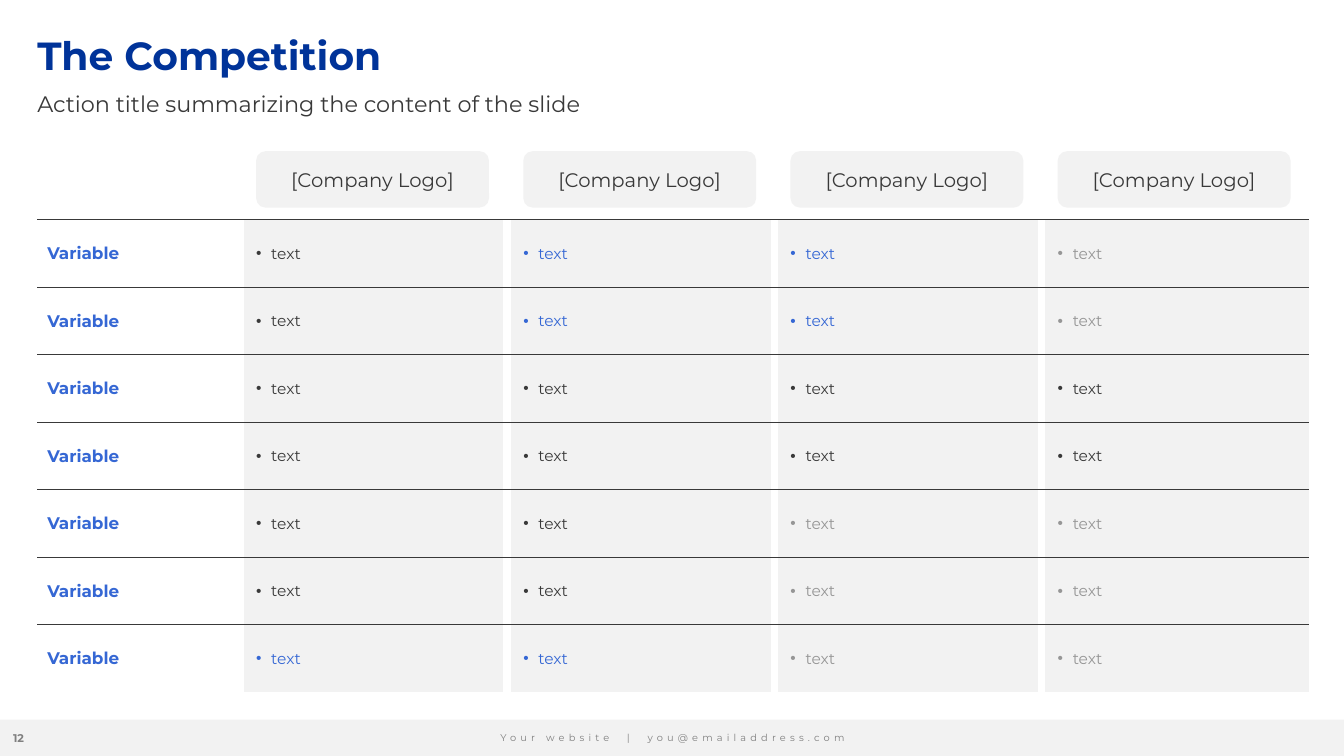
from lxml import etree
from pptx import Presentation
from pptx.dml.color import RGBColor
from pptx.enum.shapes import MSO_SHAPE
from pptx.enum.text import MSO_ANCHOR, PP_ALIGN
from pptx.oxml.ns import qn
from pptx.util import Inches, Pt

RECTANGLE, ROUNDED = MSO_SHAPE.RECTANGLE, MSO_SHAPE.ROUNDED_RECTANGLE
TOP, MIDDLE, BOTTOM = MSO_ANCHOR.TOP, MSO_ANCHOR.MIDDLE, MSO_ANCHOR.BOTTOM
LEFT, CENTER = PP_ALIGN.LEFT, PP_ALIGN.CENTER

COLORS = {
    "navy": "003399", "blue": "3567D4", "dark": "393939", "pale": "969696",
    "footer": "808080", "panel": "F2F2F2", "white": "FFFFFF",
}
RATINGS = [
    ["dark", "blue", "blue", "pale"],
    ["dark", "blue", "blue", "pale"],
    ["dark", "dark", "dark", "dark"],
    ["dark", "dark", "dark", "dark"],
    ["dark", "dark", "pale", "pale"],
    ["dark", "dark", "pale", "pale"],
    ["blue", "blue", "pale", "pale"],
]
MARGIN = 0.37
CONTENT_WIDTH = 12.6
LABEL_WIDTH, COMPANY_WIDTH = 2.01, 2.65
HEADER_HEIGHT, ROW_HEIGHT = 0.79, 0.67


class SlideBuilder:
    font = "Montserrat"

    def __init__(self, page):
        self.page = page

    def color(self, name):
        return RGBColor.from_string(COLORS[name])

    def add_span(self, para, text, size, color, bold=False, spacing=None):
        span = para.add_run()
        span.text = text
        formats = {"name": self.font, "size": Pt(size), "bold": bold}
        for key, value in formats.items():
            setattr(span.font, key, value)
        span.font.color.rgb = self.color(color)
        if spacing:
            span._r.get_or_add_rPr().set("spc", str(spacing * 100))

    def text(self, area, text, size, color, anchor=MIDDLE, align=LEFT,
             wrap=True, line_spacing=None, **style):
        box = self.page.shapes.add_textbox(*map(Inches, area))
        frame = box.text_frame
        formats = {
            "word_wrap": wrap, "vertical_anchor": anchor, "margin_left": 0,
            "margin_top": 0, "margin_right": 0, "margin_bottom": 0,
        }
        for key, value in formats.items():
            setattr(frame, key, value)
        para = frame.paragraphs[0]
        para.alignment = align
        para.line_spacing = line_spacing
        self.add_span(para, text, size, color, **style)

    def panel(self, area, kind, text=None):
        shape = self.page.shapes.add_shape(kind, *map(Inches, area))
        shape.shadow.inherit = False
        shape.fill.solid()
        shape.fill.fore_color.rgb = self.color("panel")
        shape.line.fill.background()
        if text:
            shape.text_frame.vertical_anchor = MIDDLE
            para = shape.text_frame.paragraphs[0]
            para.alignment = CENTER
            self.add_span(para, text, 14, "dark")

    def border(self, cell, side, color=None, points=0):
        properties = cell._tc.get_or_add_tcPr()
        line = etree.SubElement(properties, qn(f"a:ln{side}"), w=str(Pt(points)))
        if color:
            fill = etree.SubElement(line, qn("a:solidFill"))
            etree.SubElement(fill, qn("a:srgbClr"), val=COLORS[color])
        else:
            etree.SubElement(line, qn("a:noFill"))

    def borders(self, cell, row, column, last_row, last_column):
        sides = {
            "L": (column > 0, "white", 6),
            "R": (column < last_column, "white", 6),
            "T": (row > 0, "dark", 1),
            "B": (row < last_row, "dark", 1),
        }
        for side, (visible, color, points) in sides.items():
            if visible:
                self.border(cell, side, color, points)
            else:
                self.border(cell, side)

    def rating(self, cell, color):
        cell.margin_left = Inches(0.16)
        para = cell.text_frame.paragraphs[0]
        para.level = 1
        properties = para._p.get_or_add_pPr()
        properties.set("marL", str(Inches(0.15)))
        properties.set("indent", str(Inches(-0.15)))
        etree.SubElement(properties, qn("a:buFont"), typeface="Arial")
        etree.SubElement(properties, qn("a:buChar"), char="•")
        self.add_span(para, "text", 11, color)

    def comparison(self, top, ratings):
        rows, columns = len(ratings) + 1, len(ratings[0]) + 1
        height = HEADER_HEIGHT + len(ratings) * ROW_HEIGHT
        area = (MARGIN, top, CONTENT_WIDTH, height)
        table = self.page.shapes.add_table(rows, columns, *map(Inches, area)).table
        table.first_row = table.horz_banding = False
        for index, column in enumerate(table.columns):
            column.width = Inches(COMPANY_WIDTH if index else LABEL_WIDTH)
        for index, row in enumerate(table.rows):
            row.height = Inches(ROW_HEIGHT if index else HEADER_HEIGHT)
            for position, cell in enumerate(row.cells):
                self.borders(cell, index, position, rows - 1, columns - 1)
                cell.vertical_anchor = MIDDLE
                if index == 0:
                    cell.fill.background()
                    continue
                cell.fill.solid()
                cell.fill.fore_color.rgb = self.color("panel" if position else "white")
                if position:
                    self.rating(cell, ratings[index - 1][position - 1])
                else:
                    self.add_span(cell.text_frame.paragraphs[0], "Variable", 12,
                                  "blue", bold=True)


def main():
    deck = Presentation()
    deck.slide_width, deck.slide_height = Inches(13.33), Inches(7.5)
    builder = SlideBuilder(deck.slides.add_slide(deck.slide_layouts[6]))

    builder.panel((0, 7.14, 13.33, 0.36), RECTANGLE)
    builder.text((0, 7.14, 0.37, 0.36), "12", 8, "footer", align=CENTER,
                 wrap=False, bold=True)
    builder.text((4.88, 7.26, 3.58, 0.12), "Your website  |  you@emailaddress.com",
                 7, "footer", align=CENTER, wrap=False, spacing=3)

    builder.text((MARGIN, 0.36, CONTENT_WIDTH, 0.42), "The Competition", 28, "navy",
                 anchor=TOP, line_spacing=0.9, bold=True)
    builder.text((MARGIN, 0.92, CONTENT_WIDTH, 0.24),
                 "Action title summarizing the content of the slide", 16, "dark",
                 anchor=BOTTOM)

    builder.comparison(1.39, RATINGS)
    for index in range(len(RATINGS[0])):
        builder.panel((2.54 + index * COMPANY_WIDTH, 1.5, 2.31, 0.56), ROUNDED,
                      "[Company Logo]")

    deck.save("out.pptx")


if __name__ == "__main__":
    main()
